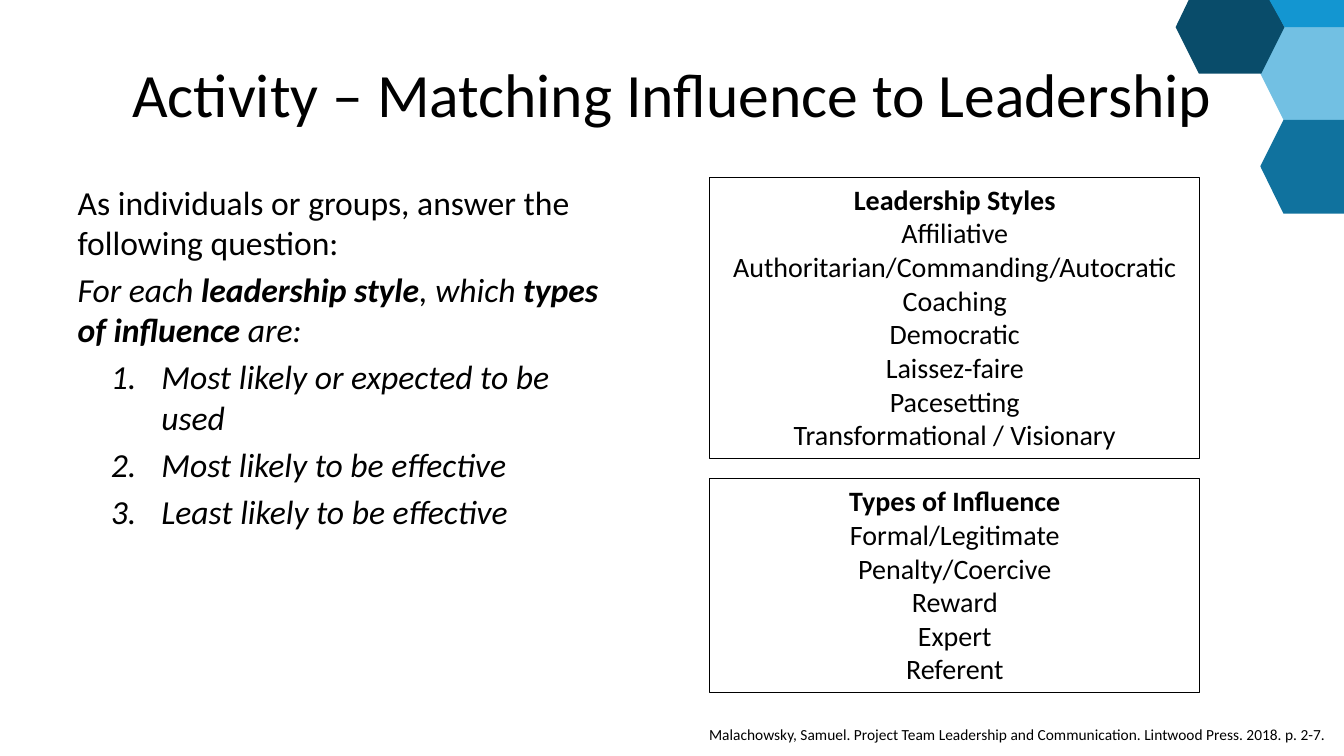
from lxml import etree
from pptx import Presentation
from pptx.dml.color import RGBColor
from pptx.enum.shapes import MSO_SHAPE as Shape
from pptx.enum.text import MSO_ANCHOR as Anchor, MSO_AUTO_SIZE as AutoSize, PP_ALIGN as Align
from pptx.oxml.ns import qn
from pptx.util import Inches, Pt

BLACK = RGBColor(0x00, 0x00, 0x00)
SKY = RGBColor(0x72, 0xC0, 0xE3)
OCEAN = RGBColor(0x10, 0x72, 0x9E)
NAVY = RGBColor(0x09, 0x4C, 0x6A)
AZURE = RGBColor(0x13, 0x96, 0xD1)
FONT = "Calibri"

# Content: a paragraph is a list of (text, bold) spans
TITLE = "Activity – Matching Influence to Leadership"
INTRO = [("As individuals or groups, answer the following question:", False)]
QUESTION = [("For each ", False), ("leadership style", True), (", which ", False),
            ("types of influence ", True), ("are:", False)]
CHOICES = ["Most likely or expected to be used", "Most likely to be effective",
           "Least likely to be effective"]
LISTS = [  # top, height, heading, entries
    (1.76, 2.79, "Leadership Styles",
     ["Affiliative", "Authoritarian/Commanding/Autocratic", "Coaching", "Democratic",
      "Laissez-faire", "Pacesetting", "Transformational / Visionary"]),
    (4.75, 2.12, "Types of Influence",
     ["Formal/Legitimate", "Penalty/Coercive", "Reward", "Expert", "Referent"]),
]
CITATION = ("Malachowsky, Samuel. Project Team Leadership and Communication. "
            "Lintwood Press. 2018. p. 2-7.")
HEXAGONS = [  # corner decoration, cut off by the page edge
    (SKY, [(12.5, 0.73), (12.73, 0.26), (13.33, 0.26), (13.33, 1.19), (12.73, 1.19)]),
    (OCEAN, [(12.5, 1.65), (12.73, 1.19), (13.33, 1.19), (13.33, 2.12), (12.73, 2.12)]),
    (NAVY, [(11.66, 0.27), (11.79, 0), (12.61, 0), (12.74, 0.27), (12.51, 0.73), (11.89, 0.73)]),
    (AZURE, [(12.59, 0), (13.33, 0), (13.33, 0.27), (12.74, 0.27)]),
]


def place(shape, left, top, width, height):
    shape.left, shape.top = Inches(left), Inches(top)
    shape.width, shape.height = Inches(width), Inches(height)


def write(para, text, size, bold=False, italic=False, align=None):
    span = para.add_run()
    span.text = text
    span.font.name, span.font.size = FONT, Pt(size)
    span.font.bold, span.font.italic = bold, italic
    span.font.color.rgb = BLACK
    if align is not None:
        para.alignment = align


def next_para(frame):
    first = frame.paragraphs[0]
    return first if not first.runs else frame.add_paragraph()


def set_bullet(para, tag, margin=0, indent=0, **attributes):
    props = para._p.get_or_add_pPr()
    props.set("marL", str(Inches(margin)))
    props.set("indent", str(Inches(indent)))
    etree.SubElement(props, qn(tag), **attributes)


deck = Presentation()
deck.slide_width, deck.slide_height = Inches(13.33), Inches(7.5)
page = deck.slides.add_slide(deck.slide_layouts[1])

# Corner hexagons
for color, points in HEXAGONS:
    corners = [(Inches(x), Inches(y)) for x, y in points]
    builder = page.shapes.build_freeform(*corners[0])
    builder.add_line_segments(corners[1:], close=True)
    hexagon = builder.convert_to_shape()
    hexagon.shadow.inherit = False
    hexagon.fill.solid()
    hexagon.fill.fore_color.rgb = color
    hexagon.line.fill.background()

# Title
title = page.shapes.title
place(title, 0.67, 0.3, 12, 1.25)
title.text_frame.auto_size = AutoSize.NONE
title.text_frame.vertical_anchor = Anchor.MIDDLE
write(title.text_frame.paragraphs[0], TITLE, 44, align=Align.CENTER)

# Question and numbered choices
body = page.placeholders[1]
place(body, 0.67, 1.75, 5.57, 5.03)
body.text_frame.auto_size = AutoSize.NONE
for spans, italic in ((INTRO, False), (QUESTION, True)):
    para = next_para(body.text_frame)
    set_bullet(para, "a:buNone")
    for text, bold in spans:
        write(para, text, 24, bold=bold, italic=italic)
for choice in CHOICES:
    para = next_para(body.text_frame)
    para.level = 1
    set_bullet(para, "a:buAutoNum", margin=0.83, indent=-0.5, type="arabicPeriod")
    write(para, choice, 24, italic=True)

# Framed lists
for top, height, heading, entries in LISTS:
    box = page.shapes.add_shape(Shape.RECTANGLE, 0, 0, 0, 0)
    place(box, 7.04, top, 4.86, height)
    box.shadow.inherit = False
    box.fill.background()
    box.line.color.rgb, box.line.width = BLACK, Pt(0.75)
    box.text_frame.word_wrap = True
    box.text_frame.vertical_anchor = Anchor.TOP
    for text in [heading, *entries]:
        write(next_para(box.text_frame), text, 20, bold=text == heading, align=Align.CENTER)

# Citation
citation = page.shapes.add_textbox(Inches(0.13), Inches(7.14), Inches(13.12), Inches(0.29))
citation.text_frame.word_wrap = True
write(citation.text_frame.paragraphs[0], CITATION, 11, align=Align.RIGHT)

deck.save("out.pptx")
